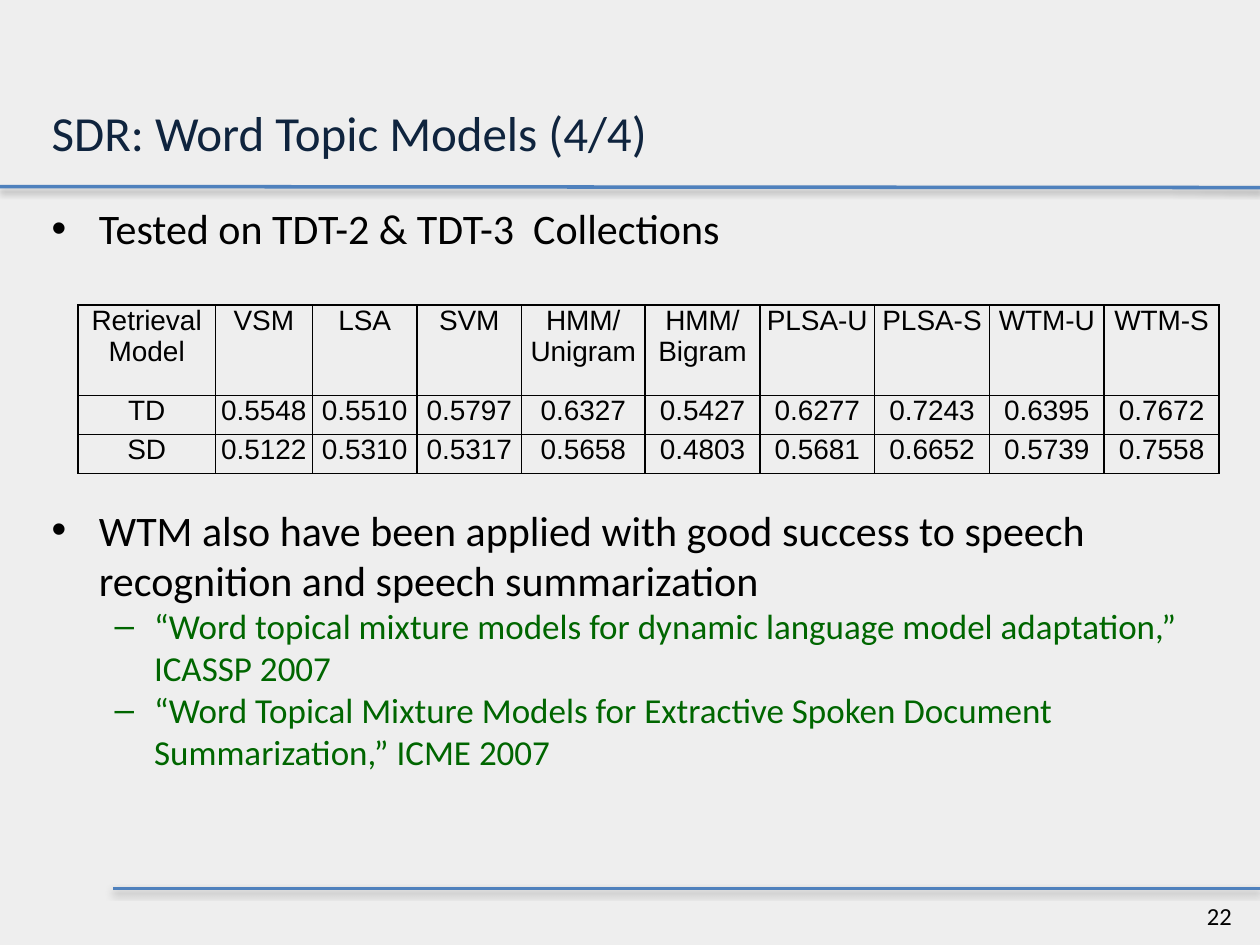
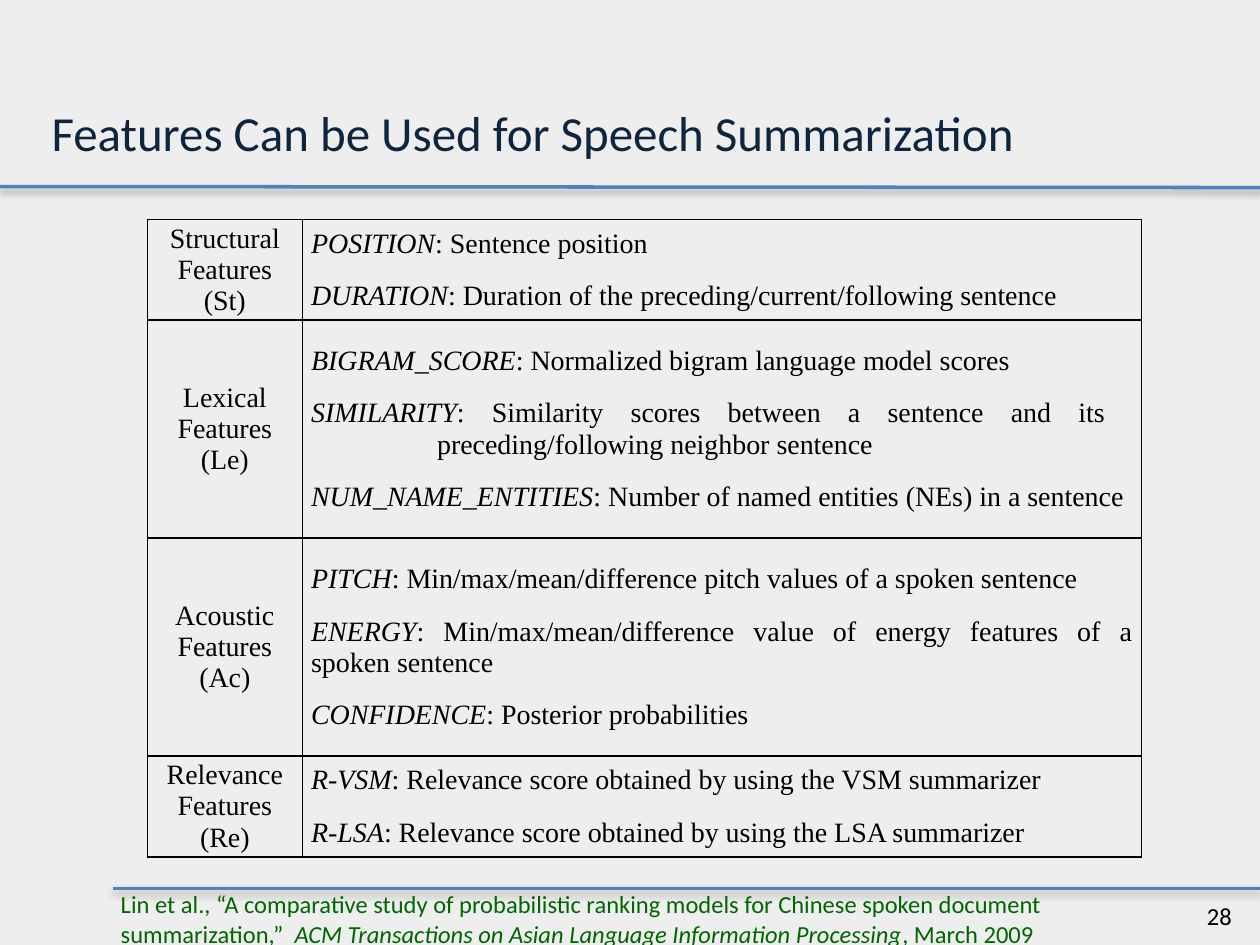
from collections import namedtuple
from dataclasses import dataclass

from lxml.etree import SubElement
from pptx import Presentation
from pptx.dml.color import RGBColor
from pptx.enum.shapes import MSO_CONNECTOR
from pptx.enum.text import MSO_ANCHOR, MSO_AUTO_SIZE, PP_ALIGN
from pptx.oxml import parse_xml
from pptx.oxml.ns import nsdecls, qn
from pptx.util import Pt

Box = namedtuple("Box", "x y w h")


@dataclass(frozen=True)
class Theme:
    back: str = "EEEEEE"
    rule: str = "4F81BD"
    head: str = "0F243E"
    text: str = "000000"
    cite: str = "006600"
    main: str = "Calibri"
    sans: str = "Arial"
    serif: str = "Times New Roman"
    title: int = 28
    list: int = 24
    sub: int = 20
    cell: int = 16
    note: int = 14


THEME = Theme()
PAGE = Box(0, 0, 720, 540)
TITLE = Box(22.3, 11.5, 675.4, 84.2)
BODY = Box(22.3, 112.3, 675.4, 376.6)
SCORES = Box(44.6, 174.2, 652.3, 96.5)
GROUPS = Box(84.2, 125.3, 568.1, 355.8)
NOTE = Box(61.9, 504.7, 630, 41)

SCORE_ROWS = [
    ["Retrieval Model", "VSM", "LSA", "SVM", "HMM/\nUnigram", "HMM/\nBigram",
     "PLSA-U", "PLSA-S", "WTM-U", "WTM-S"],
    ["TD", "0.5548", "0.5510", "0.5797", "0.6327", "0.5427",
     "0.6277", "0.7243", "0.6395", "0.7672"],
    ["SD", "0.5122", "0.5310", "0.5317", "0.5658", "0.4803",
     "0.5681", "0.6652", "0.5739", "0.7558"],
]
FEATURES = [
    ("Structural Features\v(St)", [
        ("POSITION", "Sentence position"),
        ("DURATION", "Duration of the preceding/current/following sentence"),
    ]),
    ("Lexical Features (Le)", [
        ("BIGRAM_SCORE", "Normalized bigram language model scores"),
        ("SIMILARITY", "Similarity scores between a sentence and its "
                       "\vpreceding/following neighbor sentence"),
        ("NUM_NAME_ENTITIES", "Number of named entities (NEs) in a sentence"),
    ]),
    ("Acoustic Features (Ac)", [
        ("PITCH", "Min/max/mean/difference pitch values of a spoken sentence"),
        ("ENERGY", "Min/max/mean/difference value of energy features of a "
                   "spoken sentence"),
        ("CONFIDENCE", "Posterior probabilities"),
    ]),
    ("Relevance Features (Re)", [
        ("R-VSM", "Relevance score obtained by using the VSM summarizer"),
        ("R-LSA", "Relevance score obtained by using the LSA summarizer"),
    ]),
]


def paint(par, size, color=THEME.text, face=THEME.main, align=PP_ALIGN.LEFT):
    par.alignment = align
    par.font.size = Pt(size)
    par.font.name = face
    par.font.color.rgb = RGBColor.from_string(color)


def indent(par, left, first):
    props = par._p.get_or_add_pPr()
    props.set("marL", str(Pt(left)))
    props.set("indent", str(Pt(first)))


def add_runs(par, parts):
    for text, slant in parts:
        run = par.add_run()
        run.text = text
        run.font.italic = slant


def place(shape, box):
    shape.left, shape.top, shape.width, shape.height = map(Pt, box)


def add_rule(slide, start, end):
    line = slide.shapes.add_connector(MSO_CONNECTOR.STRAIGHT,
                                      *map(Pt, start + end))
    line.line.color.rgb = RGBColor.from_string(THEME.rule)
    line.line.width = Pt(2)
    line._element.spPr.append(parse_xml(
        f'<a:effectLst {nsdecls("a")}><a:outerShdw blurRad="{Pt(4)}" '
        f'dist="{Pt(2)}" dir="5400000" rotWithShape="0">'
        '<a:srgbClr val="000000"><a:alpha val="43000"/></a:srgbClr>'
        '</a:outerShdw></a:effectLst>'))


def add_text(slide, box, wrap=True):
    shape = slide.shapes.add_textbox(*map(Pt, box))
    shape.text_frame.word_wrap = wrap
    return shape.text_frame.paragraphs[0]


def add_frame(deck, layout, title, number, box=PAGE):
    """Slide with its title, two rules and page number."""
    slide = deck.slides.add_slide(deck.slide_layouts[layout])
    right, low = box.x + box.w, box.y + box.h
    add_rule(slide, (box.x + 64.8, low - 32.4), (right, low - 32.4))
    add_rule(slide, (box.x, box.y + 106.6), (right, box.y + 107.2))
    page = add_text(slide, Box(right - 37.4, low - 28.8, 32.4, 24.5), False)
    page.text = str(number)
    paint(page, THEME.note)

    head = slide.shapes.title
    place(head, TITLE)
    frame = head.text_frame
    frame.text = title
    frame.auto_size = MSO_AUTO_SIZE.NONE
    frame.vertical_anchor = MSO_ANCHOR.BOTTOM
    paint(frame.paragraphs[0], THEME.title, THEME.head)
    return slide


def add_list(slide, box, items):
    """Bulleted body; each item is level, space before and text."""
    body = slide.placeholders[1]
    place(body, box)
    frame = body.text_frame
    frame.auto_size = MSO_AUTO_SIZE.NONE
    looks = [(27, -27, THEME.list, THEME.text),
             (58.5, -22.5, THEME.sub, THEME.cite)]
    for i, (level, gap, text) in enumerate(items):
        par = frame.add_paragraph() if i else frame.paragraphs[0]
        left, first, size, color = looks[level]
        par.text = text
        par.level = level
        par.space_before = Pt(gap)
        indent(par, left, first)
        paint(par, size, color)


def add_grid(slide, box, cols, rows, side=0, anchor=MSO_ANCHOR.TOP):
    """Unfilled table with thin black borders."""
    table = slide.shapes.add_table(len(rows), len(cols),
                                   *map(Pt, box)).table
    table.first_row = table.horz_banding = False
    for col, width in zip(table.columns, cols):
        col.width = Pt(width)
    for row, height in zip(table.rows, rows):
        row.height = Pt(height)
    for cell in table.iter_cells():
        cell.margin_left = cell.margin_right = Pt(side)
        cell.margin_top = cell.margin_bottom = 0
        cell.vertical_anchor = anchor
        props = cell._tc.get_or_add_tcPr()
        for edge in ("lnL", "lnR", "lnT", "lnB"):
            line = SubElement(props, qn(f"a:{edge}"), w=str(Pt(1)))
            fill = SubElement(line, qn("a:solidFill"))
            SubElement(fill, qn("a:srgbClr"), val=THEME.text)
        cell.fill.background()
    return table


def add_scores(slide, box):
    """Retrieval scores by model."""
    cols = [78.5, 55.4, 59.8, 59.8, 70.6] + [65.6] * 5
    table = add_grid(slide, box, cols, [51.8, 22.3, 22.3])
    for row, texts in zip(table.rows, SCORE_ROWS):
        for cell, text in zip(row.cells, texts):
            cell.text = text
            for par in cell.text_frame.paragraphs:
                paint(par, THEME.cell, face=THEME.sans, align=PP_ALIGN.CENTER)


def add_groups(slide, box):
    """Feature groups with a name cell and a cell of definitions."""
    table = add_grid(slide, box, [88.6, box.w - 88.6],
                     [53.3, 124.6, 124.6, 53.3], 5, MSO_ANCHOR.MIDDLE)
    for row, (name, terms) in zip(table.rows, FEATURES):
        label, cell = row.cells
        label.text = name
        paint(label.text_frame.paragraphs[0], THEME.cell, face=THEME.serif,
              align=PP_ALIGN.CENTER)
        frame = cell.text_frame
        for i, (term, text) in enumerate(terms):
            par = frame.add_paragraph() if i else frame.paragraphs[0]
            par.space_before = Pt(12 if i else 0)
            if "\v" in text:
                indent(par, 72, -72)
            paint(par, THEME.cell, face=THEME.serif, align=PP_ALIGN.JUSTIFY)
            first, *rest = text.split("\v")
            add_runs(par, [(term, True), (f": {first}", False)])
            for part in rest:
                par.add_line_break()
                add_runs(par, [(part, False)])


def add_note(slide, box):
    """Citation below the lower rule."""
    par = add_text(slide, box)
    paint(par, THEME.note, THEME.cite)
    add_runs(par, [
        ("Lin et al., “A comparative study of probabilistic ranking models "
         "for Chinese spoken document summarization,”  ", False),
        ("ACM Transactions on Asian Language Information Processing", True),
        (", March 2009", False),
    ])


def main():
    deck = Presentation()
    deck.slide_width, deck.slide_height = Pt(PAGE.w), Pt(PAGE.h)
    fill = deck.slide_master.background.fill
    fill.solid()
    fill.fore_color.rgb = RGBColor.from_string(THEME.back)

    # Word topic models
    slide = add_frame(deck, 1, "SDR: Word Topic Models (4/4)", 22)
    add_list(slide, BODY, [
        (0, 0, "Tested on TDT-2 & TDT-3  Collections"),
        (0, 143.3, "WTM also have been applied with good success to speech "
                   "recognition and speech summarization"),
        (1, 0, "“Word topical mixture models for dynamic language model "
               "adaptation,” ICASSP 2007"),
        (1, 0, "“Word Topical Mixture Models for Extractive Spoken Document "
               "Summarization,” ICME 2007"),
    ])
    add_scores(slide, SCORES)

    # Summarization features
    slide = add_frame(deck, 5, "Features Can be Used for Speech Summarization",
                      28)
    add_groups(slide, GROUPS)
    add_note(slide, NOTE)

    deck.save("out.pptx")


if __name__ == "__main__":
    main()
